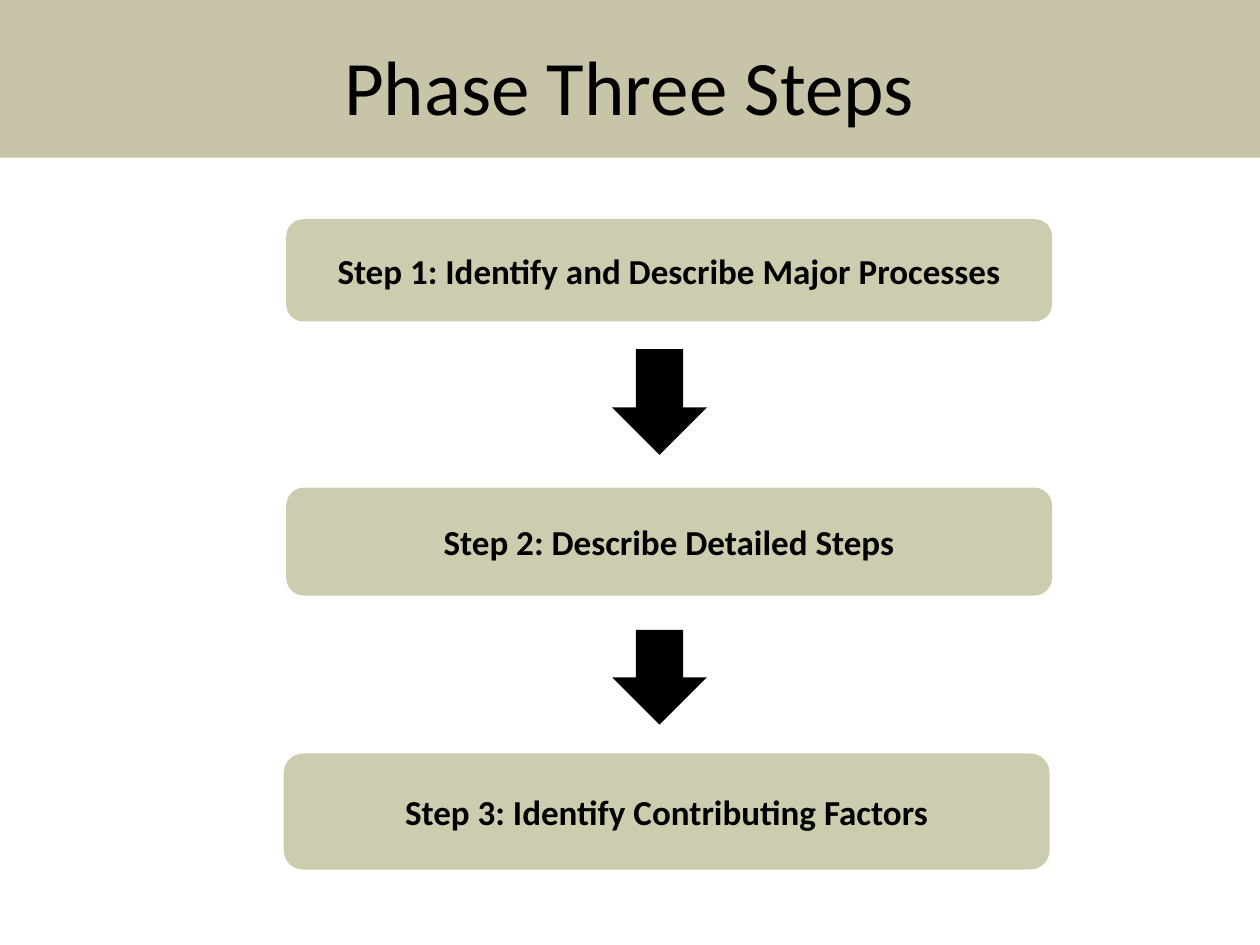
from pptx import Presentation
from pptx.dml.color import RGBColor
from pptx.enum.shapes import MSO_SHAPE
from pptx.enum.text import MSO_ANCHOR, PP_ALIGN
from pptx.util import Cm, Pt

RECTANGLE = MSO_SHAPE.RECTANGLE
ROUNDED = MSO_SHAPE.ROUNDED_RECTANGLE
DOWN_ARROW = MSO_SHAPE.DOWN_ARROW
MIDDLE = MSO_ANCHOR.MIDDLE
CENTER = PP_ALIGN.CENTER

BAND_COLOR = RGBColor(0xC8, 0xC4, 0xA8)
STEP_COLOR = RGBColor(0xCD, 0xCC, 0xAF)
BLACK = RGBColor(0, 0, 0)
FONT = "Calibri"

SLIDE_WIDTH, SLIDE_HEIGHT = 25.4, 19.05  # cm
STEP_WIDTH = 15.44
ARROW_WIDTH = 1.91

# Offsets inside the flow, in cm: left, top, height
STEPS = [
    ("Step 1: Identify and Describe Major Processes", 0.05, 0, 2.06),
    ("Step 2: Describe Detailed Steps", 0.05, 5.41, 2.18),
    ("Step 3: Identify Contributing Factors", 0, 10.77, 2.34),
]
ARROWS = [(6.62, 2.62, 2.13), (6.62, 8.28, 1.91)]


def add_block(slide, kind, left, top, width, height, color):
    block = slide.shapes.add_shape(kind, Cm(left), Cm(top), Cm(width), Cm(height))
    block.shadow.inherit = False
    block.fill.solid()
    block.fill.fore_color.rgb = color
    block.line.fill.background()
    return block


def write_text(frame, text, size, bold):
    frame.word_wrap = True
    frame.vertical_anchor = MIDDLE
    paragraph = frame.paragraphs[0]
    paragraph.text = text
    paragraph.alignment = CENTER
    paragraph.font.name = FONT
    paragraph.font.size = Pt(size)
    paragraph.font.bold = bold
    paragraph.font.color.rgb = BLACK


def add_header(slide, left, top, width, height):
    band = add_block(slide, RECTANGLE, left, top, width, height, BAND_COLOR)
    title = slide.shapes.title
    title.left, title.top = Cm(left + 5.28), Cm(top + 0.64)
    title.width, title.height = Cm(14.81), Cm(2.13)
    write_text(title.text_frame, "Phase Three Steps", 44, False)
    # Keep the band behind the title
    title.element.addprevious(band.element)


def add_flow(slide, left, top):
    # Step boxes
    for text, dx, dy, height in STEPS:
        step = add_block(slide, ROUNDED, left + dx, top + dy,
                         STEP_WIDTH, height, STEP_COLOR)
        write_text(step.text_frame, text, 20, True)
    # Arrows between the steps
    for dx, dy, height in ARROWS:
        add_block(slide, DOWN_ARROW, left + dx, top + dy,
                  ARROW_WIDTH, height, BLACK)


def main():
    deck = Presentation()
    deck.slide_width, deck.slide_height = Cm(SLIDE_WIDTH), Cm(SLIDE_HEIGHT)
    title_only = deck.slide_layouts[5]
    slide = deck.slides.add_slide(title_only)
    add_header(slide, 0, 0, SLIDE_WIDTH, 3.18)
    add_flow(slide, 5.72, 4.42)
    deck.save("out.pptx")


if __name__ == "__main__":
    main()
